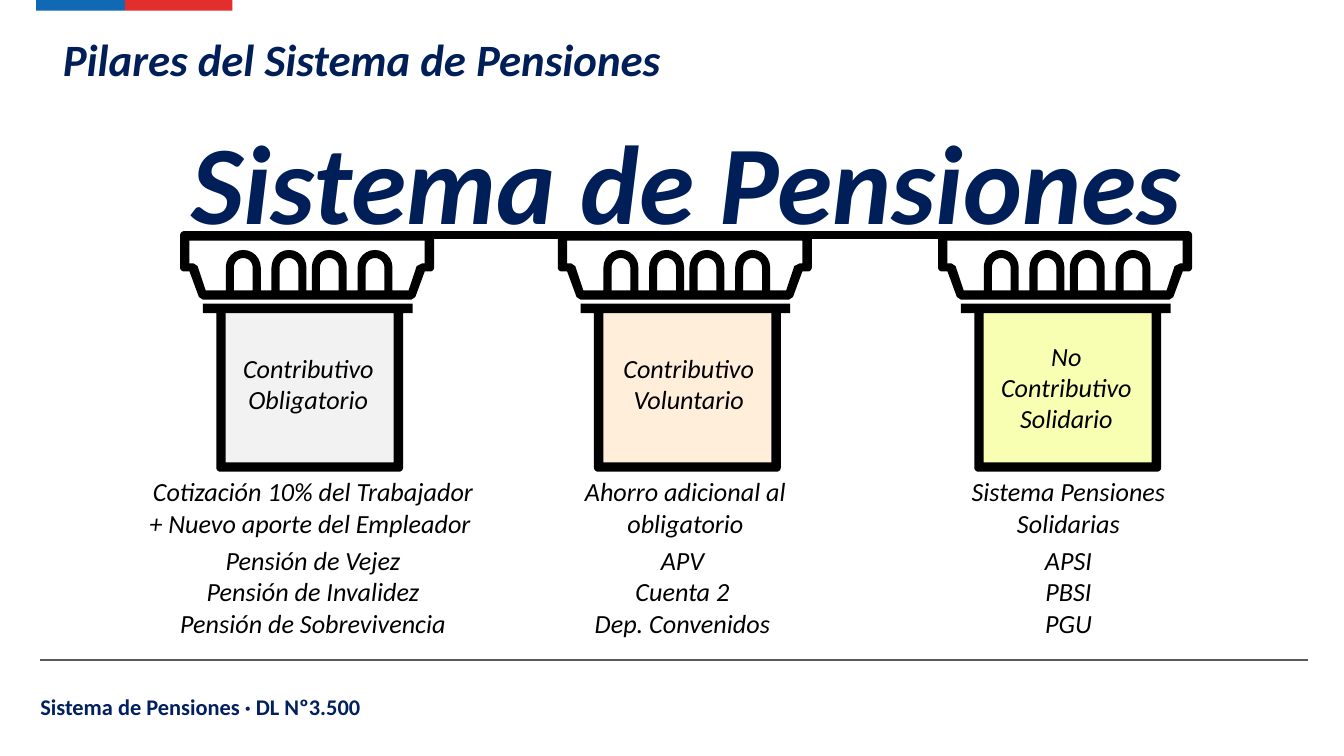
import math
from dataclasses import dataclass

import pptx
import pptx.dml.color
import pptx.enum.shapes
import pptx.enum.text
import pptx.util
from lxml import etree

Inches = pptx.util.Inches
Point = tuple[float, float]
LEFT = pptx.enum.text.PP_ALIGN.LEFT
MID = pptx.enum.text.PP_ALIGN.CENTER
WIDTH = 10
TOP = 1.72
FOOT = 0.44
SPRING = 0.27
ARCHES = [0.47, 0.81, 1.11, 1.45]
NAVY = "001E58"
BLACK = "000000"


@dataclass
class Pillar:
    left: float
    fill: str
    label: str
    label_box: tuple[float, float, float]
    note: str
    items: list[str]
    note_left: float
    note_width: float


@dataclass
class Style:
    size: float
    color: str
    bold: bool = False
    slant: bool = True
    align: int = MID
    pad: Point = (0.1, 0.05)
    indent: float = 0


BODY = Style(14, BLACK, pad=(0.13, 0.13), indent=0.01)
TITLE = Style(24, NAVY, bold=True, align=LEFT)
BANNER = Style(60, NAVY, bold=True)
FOOTER = Style(12, "002060", bold=True, slant=False, align=LEFT, pad=(0.07, 0.04))

PILLARS = [
    Pillar(1.34, "F2F2F2", "Contributivo Obligatorio", (1.56, 2.49, 0.73),
           "Cotización 10% del Trabajador + Nuevo aporte del Empleador ",
           ["Pensión de Vejez", "Pensión de Invalidez", "Pensión de Sobrevivencia"],
           0.95, 2.75),
    Pillar(4.15, "FFEED9", "Contributivo Voluntario", (4.39, 2.49, 0.73),
           "Ahorro adicional al obligatorio",
           ["APV ", "Cuenta 2 ", "Dep. Convenidos "], 4.15, 1.89),
    Pillar(6.98, "F8FFB3", "No Contributivo Solidario", (7.2, 2.4, 1.07),
           "Sistema Pensiones Solidarias",
           ["APSI", "PBSI", "PGU"], 7, 1.89),
]

deck = pptx.Presentation()
deck.slide_width = Inches(WIDTH)
deck.slide_height = Inches(WIDTH * 9 / 16)
slide = deck.slides.add_slide(deck.slide_layouts[6])
shapes = slide.shapes


def rgb(code: str) -> pptx.dml.color.RGBColor:
    return pptx.dml.color.RGBColor.from_string(code)


def paint(shape, color: str) -> None:
    shape.shadow.inherit = False
    shape.fill.solid()
    shape.fill.fore_color.rgb = rgb(color)
    shape.line.fill.background()


def block(x: float, y: float, w: float, h: float, color: str) -> None:
    kind = pptx.enum.shapes.MSO_SHAPE.RECTANGLE
    paint(shapes.add_shape(kind, Inches(x), Inches(y), Inches(w), Inches(h)), color)


def rule(x: float, end: float, y: float, color: str, width: float) -> None:
    kind = pptx.enum.shapes.MSO_CONNECTOR.STRAIGHT
    line = shapes.add_connector(kind, Inches(x), Inches(y), Inches(end), Inches(y))
    line.line.color.rgb = rgb(color)
    line.line.width = pptx.util.Pt(width)
    etree.SubElement(line._element.spPr, pptx.oxml.ns.qn("a:effectLst"))


def write(x: float, y: float, w: float, h: float, lines: list[str], style: Style) -> None:
    frame = shapes.add_textbox(Inches(x), Inches(y), Inches(w), Inches(h)).text_frame
    frame.word_wrap = True
    frame.margin_left = frame.margin_right = Inches(style.pad[0])
    frame.margin_top = frame.margin_bottom = Inches(style.pad[1])
    frame.text = "\n".join(lines)
    for para in frame.paragraphs:
        para.alignment = style.align
        if style.indent:
            para._p.get_or_add_pPr().set("marL", str(Inches(style.indent)))
        for run in para.runs:
            run.font.name = "Calibri"
            run.font.size = pptx.util.Pt(style.size)
            run.font.bold = style.bold
            run.font.italic = style.slant
            run.font.color.rgb = rgb(style.color)


def arc(x: float, y: float, r: float, start: int, sweep: int) -> list[Point]:
    steps = abs(sweep) // 15
    turns = [math.radians(start + sweep * i / steps) for i in range(steps + 1)]
    return [(x + r * math.cos(t), y - r * math.sin(t)) for t in turns]


def arch(x: float, r: float) -> list[Point]:
    return [(x + r, FOOT), *arc(x, SPRING, r, 0, 180), (x - r, FOOT)]


def outline(left: float, rings: list[list[Point]]) -> None:
    paths = [[(Inches(left + x), Inches(TOP + y)) for x, y in ring] for ring in rings]
    pen = shapes.build_freeform(*paths[0][0])
    for i, path in enumerate(paths):
        if i:
            pen.move_to(*path[0])
        pen.add_line_segments(path[1:], close=True)
    paint(pen.convert_to_shape(), BLACK)


def crown(left: float) -> None:
    edge = [*arc(1.86, 0.03, 0.03, 0, 90), *arc(0.03, 0.03, 0.03, 90, 90),
            *arc(0.03, 0.27, 0.03, 180, 90), (0.07, 0.3), (0.14, 0.49),
            (0.17, 0.51), (1.72, 0.51), (1.75, 0.49), (1.82, 0.3),
            *arc(1.86, 0.27, 0.03, 270, 90)]
    bays = [p for x in reversed(ARCHES) for p in arch(x, 0.13)]
    inner = [(1.82, 0.24), (1.8, 0.24), (1.76, 0.26), (1.7, FOOT), *bays,
             (0.19, FOOT), (0.13, 0.26), (0.1, 0.24), (0.07, 0.24),
             (0.07, 0.07), (1.82, 0.07)]
    outline(left, [edge, *[arch(x, 0.07) for x in ARCHES], inner])


def shaft(left: float) -> None:
    edge = [(0.17, 0.54), (0.17, 0.61), (0.27, 0.61),
            *arc(0.3, 1.76, 0.03, 180, 90), *arc(1.63, 1.76, 0.03, 270, 90),
            (1.66, 0.61), (1.73, 0.61), (1.73, 0.54)]
    inner = [(0.34, 0.61), (1.59, 0.61), (1.59, 1.72), (0.34, 1.72)]
    outline(left, [edge, inner])


def draw(pillar: Pillar) -> None:
    block(pillar.left + 0.33, 2.33, 1.26, 1.14, pillar.fill)
    crown(pillar.left)
    shaft(pillar.left)
    x, y, h = pillar.label_box
    write(x, y, 1.46, h, [pillar.label], BODY)
    x, w = pillar.note_left, pillar.note_width
    write(x, 3.41, w, 0.73, [pillar.note], BODY)
    write(x, 3.92, w, 0.88, pillar.items, BODY)


def main() -> None:
    rule(0.3, 9.73, 4.91, "595959", 0.75)
    block(0.27, 0, 0.66, 0.08, "1069B4")
    block(0.93, 0, 0.8, 0.08, "E22E2C")
    write(0.23, 5.12, 3.89, 0.25, ["Sistema de Pensiones · DL Nº3.500"], FOOTER)
    write(0.37, 0.19, 8.37, 0.5, ["Pilares del Sistema de Pensiones"], TITLE)
    for pillar in PILLARS:
        draw(pillar)
    write(1.16, 0.79, 7.89, 1.11, ["Sistema de Pensiones"], BANNER)
    rule(2.84, 7.65, 1.75, BLACK, 4.5)
    deck.save("out.pptx")


if __name__ == "__main__":
    main()
